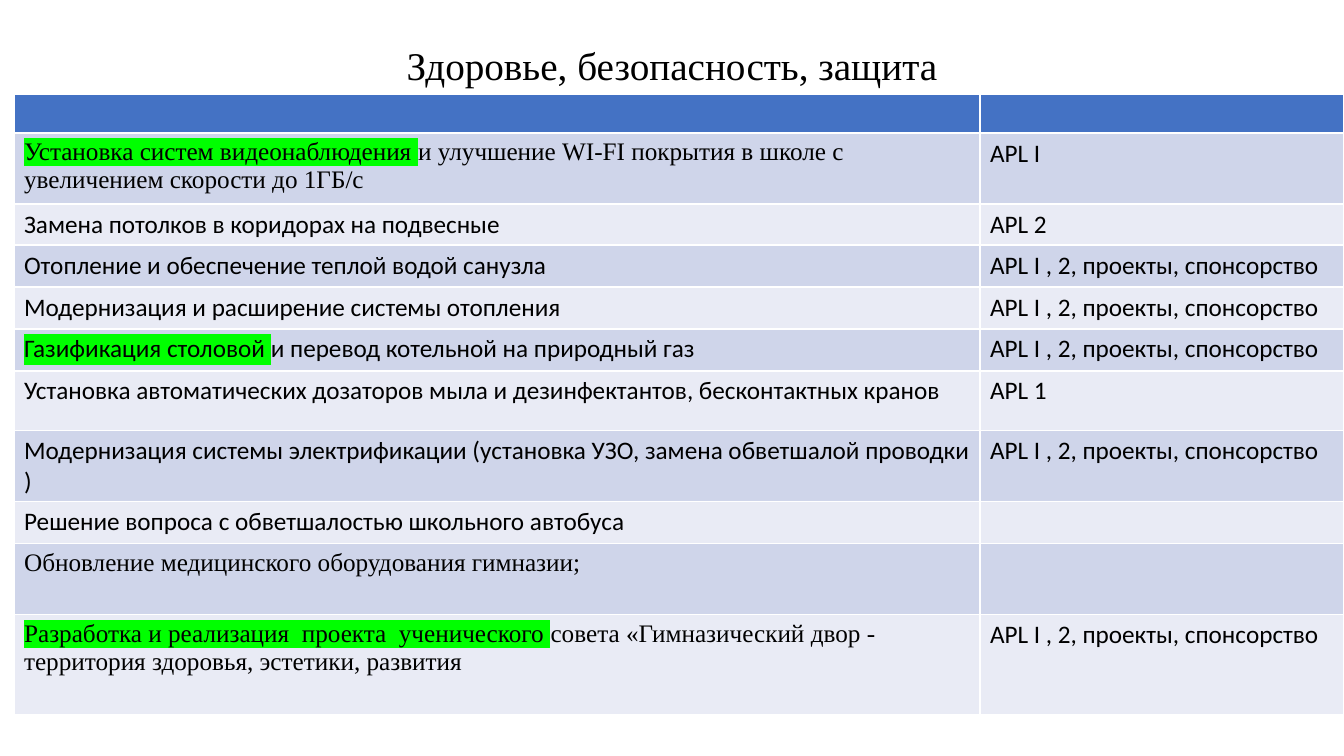
import lxml.etree
import pptx
import pptx.dml.color
import pptx.enum.text
import pptx.oxml.ns
import pptx.util

RGBColor = pptx.dml.color.RGBColor
BLACK = RGBColor(0x00, 0x00, 0x00)
HEADER = RGBColor(0x44, 0x72, 0xC4)
DARK_BAND = RGBColor(0xCF, 0xD5, 0xEA)
LIGHT_BAND = RGBColor(0xE9, 0xEB, 0xF5)
MARKER = RGBColor(0x00, 0xFF, 0x00)

SERIF, SANS = "Times New Roman", "Calibri"
SHARED = "APL I , 2, проекты, спонсорство"
COLUMNS = [966, 364]
HEADER_HEIGHT = 39
MEASURES = [
    (71, SERIF, "Установка систем видеонаблюдения ",
     "и улучшение WI-FI покрытия в школе с увеличением скорости до 1ГБ/с", "APL I"),
    (41, SANS, "", "Замена потолков в коридорах на подвесные", "APL 2"),
    (42, SANS, "", "Отопление и обеспечение теплой водой санузла", SHARED),
    (42, SANS, "", "Модернизация и расширение системы отопления", SHARED),
    (42, SANS, "Газификация столовой ", "и перевод котельной на природный газ", SHARED),
    (60, SANS, "", "Установка автоматических дозаторов мыла и дезинфектантов, "
     "бесконтактных кранов", "APL 1"),
    (71, SANS, "", "Модернизация системы электрификации (установка УЗО, "
     "замена обветшалой проводки )", SHARED),
    (42, SANS, "", "Решение вопроса с обветшалостью школьного автобуса", ""),
    (71, SERIF, "", "Обновление медицинского оборудования гимназии;", ""),
    (100, SERIF, "Разработка и реализация  проекта  ученического ",
     "совета «Гимназический двор - территория здоровья, эстетики, развития", SHARED),
]


class SlideBuilder:
    """Holds the style and the current slide, and draws its elements."""

    def __init__(self, page, pixels_per_inch=100.8, body_size=18):
        self.page = page
        self.scale = 914400 / pixels_per_inch
        self.body_size = body_size

    def px(self, length):
        return pptx.util.Emu(round(length * self.scale))

    def set_text(self, para, text, face, size, marked=""):
        para.font.name = face
        para.font.size = pptx.util.Pt(size)
        para.font.color.rgb = BLACK
        if marked:
            span = para.add_run()
            span.text = marked
            highlight = lxml.etree.SubElement(
                span._r.get_or_add_rPr(), pptx.oxml.ns.qn("a:highlight"))
            lxml.etree.SubElement(
                highlight, pptx.oxml.ns.qn("a:srgbClr"), val=str(MARKER))
        if text:
            para.add_run().text = text

    def title(self, text, left, top, width, height):
        box = self.page.shapes.add_textbox(*map(self.px, (left, top, width, height)))
        box.text_frame.word_wrap = True
        para = box.text_frame.paragraphs[0]
        para.alignment = pptx.enum.text.PP_ALIGN.CENTER
        self.set_text(para, text, SERIF, 28)

    def fill(self, cell, color):
        cell.fill.solid()
        cell.fill.fore_color.rgb = color

    def table(self, left, top, columns, header_height, measures):
        heights = [header_height] + [measure[0] for measure in measures]
        table = self.page.shapes.add_table(
            len(heights), len(columns),
            *map(self.px, (left, top, sum(columns), sum(heights)))).table
        for column, width in zip(table.columns, columns):
            column.width = self.px(width)
        for row, height in zip(table.rows, heights):
            row.height = self.px(height)
        for cell in table.rows[0].cells:
            self.fill(cell, HEADER)
            cell.margin_top = cell.margin_bottom = 0
        for index, (_, face, marked, text, funding) in enumerate(measures):
            measure_cell, funding_cell = table.rows[index + 1].cells
            for cell in (measure_cell, funding_cell):
                self.fill(cell, LIGHT_BAND if index % 2 else DARK_BAND)
            self.set_text(measure_cell.text_frame.paragraphs[0],
                          text, face, self.body_size, marked)
            self.set_text(funding_cell.text_frame.paragraphs[0],
                          funding, SANS, self.body_size)


def main():
    deck = pptx.Presentation()
    builder = SlideBuilder(deck.slides.add_slide(deck.slide_layouts[6]))
    deck.slide_width, deck.slide_height = builder.px(1344), builder.px(756)
    builder.title("Здоровье, безопасность, защита", 336, 36, 672, 57)
    builder.table(14, 94, COLUMNS, HEADER_HEIGHT, MEASURES)
    deck.save("out.pptx")


if __name__ == "__main__":
    main()
